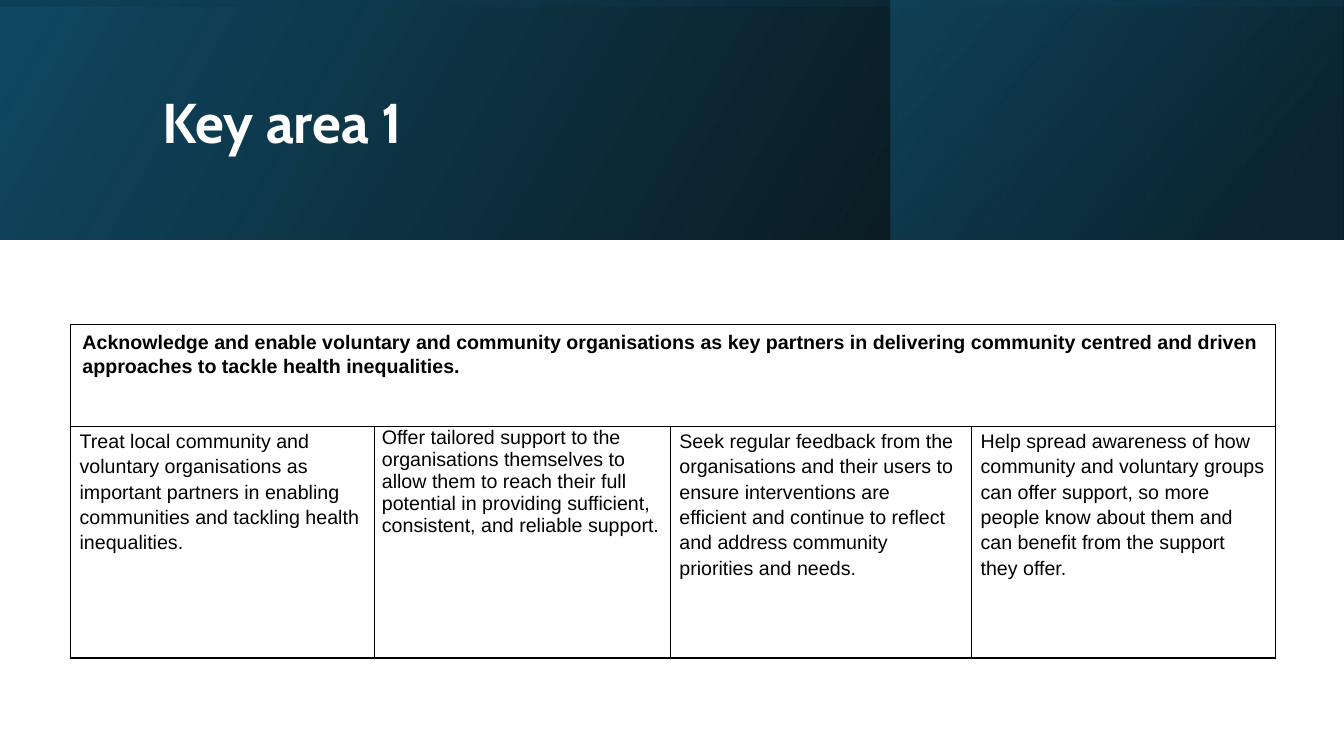
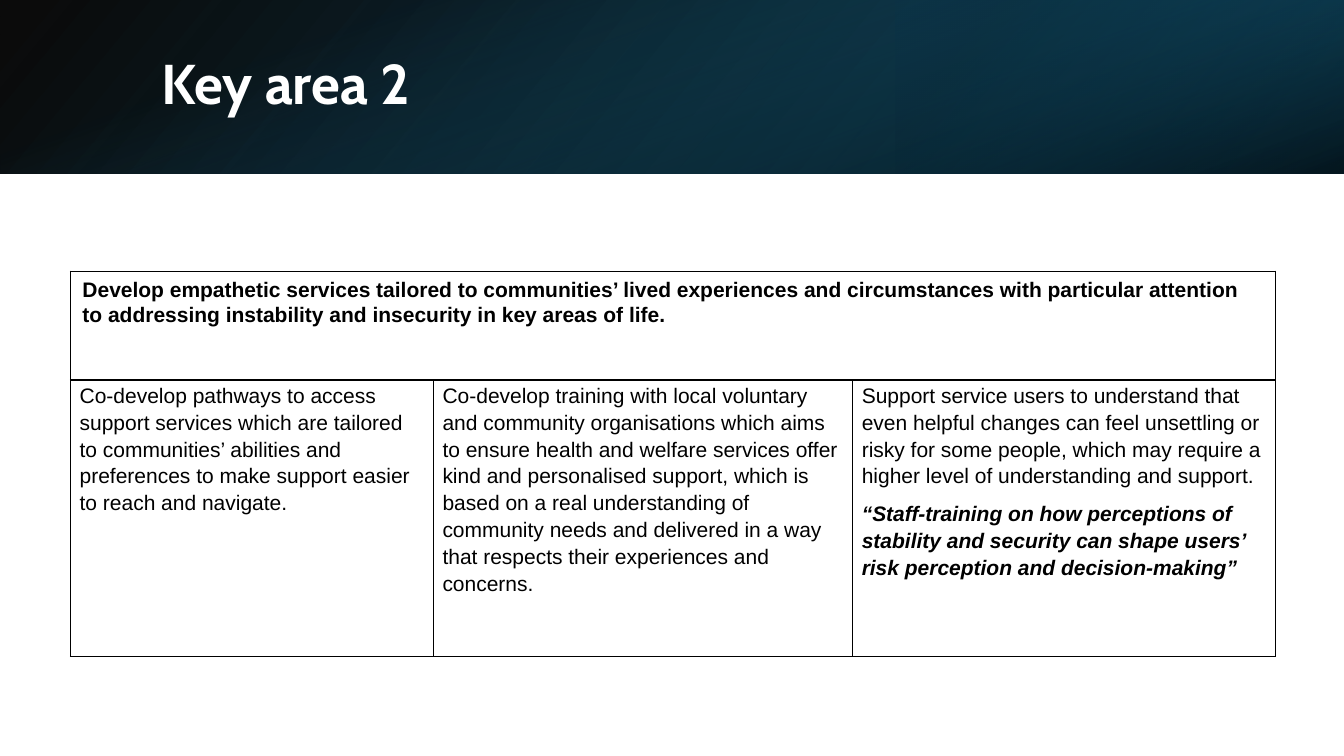
from dataclasses import dataclass

from lxml import etree
from pptx import Presentation
from pptx.dml.color import RGBColor
from pptx.enum import shapes, text
from pptx.oxml import ns
from pptx.util import Pt

COLORS = {
    "black": "000000",
    "white": "FFFFFF",
    "navy": "0B3041",
    "ocean": "104862",
    "teal": "156082",
}
TITLE_FONT, BODY_FONT = "Cabin", "Arial"
SLIDE_W, SLIDE_H = 960, 540
TABLE_LEFT = 50.4


@dataclass
class Band:
    stops: list
    angle: int
    left: float = 0
    rotation: int = 0
    flip: bool = True


@dataclass
class Action:
    paragraphs: list
    margins: tuple = (6.5, 0.7, 6.5, 0)
    spacing: float = 1.15
    after: float = 8


def add_node(parent, tag, **attributes):
    return etree.SubElement(parent, ns.qn(tag), attributes)


def style_runs(paragraph, font, size, color, bold=False, italic=False):
    for run in paragraph.runs:
        run.font.name = font
        run.font.size = Pt(size)
        run.font.bold = bold
        run.font.italic = italic
        run.font.color.rgb = RGBColor.from_string(COLORS[color])


def fill_gradient(shape, stops, angle):
    properties = shape._element.spPr
    gradient = etree.Element(ns.qn("a:gradFill"), rotWithShape="1")
    stop_list = add_node(gradient, "a:gsLst")
    for position, color, opacity in stops:
        stop = add_node(stop_list, "a:gs", pos=str(position * 1000))
        tint = add_node(stop, "a:srgbClr", val=COLORS[color])
        add_node(tint, "a:alpha", val=str(opacity * 1000))
    add_node(gradient, "a:lin", ang=str(angle * 60000), scaled="0")
    properties.find(ns.qn("a:prstGeom")).addnext(gradient)


def add_banner(slide, height, bands):
    for band in bands:
        left, top, width, depth = band.left, 0, SLIDE_W - band.left, height
        if band.rotation % 180:
            left, top = left + (width - depth) / 2, (depth - width) / 2
            width, depth = depth, width
        panel = slide.shapes.add_shape(
            shapes.MSO_SHAPE.RECTANGLE, Pt(left), Pt(top), Pt(width), Pt(depth))
        panel.shadow.inherit = False
        panel.line.fill.background()
        panel.rotation = band.rotation
        if band.flip:
            panel._element.spPr.xfrm.set("flipH", "1")
        fill_gradient(panel, band.stops, band.angle)


def place_title(slide, wording, box):
    title = slide.shapes.title
    title.left, title.top, title.width, title.height = map(Pt, box)
    slide.shapes._spTree.append(title._element)
    frame = title.text_frame
    frame.text = wording
    frame.word_wrap = True
    frame.auto_size = text.MSO_AUTO_SIZE.NONE
    frame.vertical_anchor = text.MSO_ANCHOR.MIDDLE
    heading = frame.paragraphs[0]
    heading.alignment = text.PP_ALIGN.LEFT
    heading.line_spacing = 0.9
    style_runs(heading, TITLE_FONT, 40, "white", bold=True)


def frame_cell(cell):
    properties = cell._tc.get_or_add_tcPr()
    for side in ("a:lnL", "a:lnR", "a:lnT", "a:lnB"):
        border = add_node(properties, side, w=str(Pt(1)))
        add_node(add_node(border, "a:solidFill"), "a:srgbClr", val=COLORS["black"])
    cell.fill.background()


def write_cell(cell, action, size, bold=False):
    (cell.margin_left, cell.margin_top,
     cell.margin_right, cell.margin_bottom) = map(Pt, action.margins)
    cell.vertical_anchor = text.MSO_ANCHOR.TOP
    frame = cell.text_frame
    frame.text = "\n".join(action.paragraphs)
    for index, paragraph in enumerate(frame.paragraphs):
        is_quote = index > 0
        paragraph.line_spacing = action.spacing
        paragraph.space_after = Pt(action.after)
        style_runs(paragraph, BODY_FONT, size, "black", bold or is_quote, is_quote)


def add_action_table(slide, top, widths, heights, size, aim, actions):
    table = slide.shapes.add_table(
        len(heights), len(widths), Pt(TABLE_LEFT), Pt(top),
        Pt(sum(widths)), Pt(sum(heights))).table
    table.first_row = table.horz_banding = False
    for column, width in zip(table.columns, widths):
        column.width = Pt(width)
    for row, height in zip(table.rows, heights):
        row.height = Pt(height)
    for cell in table.iter_cells():
        frame_cell(cell)
    table.cell(0, 0).merge(table.cell(0, len(widths) - 1))
    aim_text = Action([aim], margins=(8.5, 4.3, 8.5, 4.3), spacing=1.07)
    write_cell(table.cell(0, 0), aim_text, size, bold=True)
    for index, action in enumerate(actions):
        write_cell(table.cell(1, index), action, size)


def add_key_area(deck, wording, title_box, banner_height, bands, **content):
    slide = deck.slides.add_slide(deck.slide_layouts[5])
    add_banner(slide, banner_height, bands)
    place_title(slide, wording, title_box)
    add_action_table(slide, **content)


def main():
    deck = Presentation()
    deck.slide_width, deck.slide_height = Pt(SLIDE_W), Pt(SLIDE_H)
    base = [(0, "black", 96), (100, "ocean", 100)]

    add_key_area(
        deck, "Key area 1", (108.7, 27.4, 765.4, 123.8), 170.9,
        [
            Band(base, 330),
            Band([(19, "navy", 68), (100, "teal", 48)], 320, left=636),
            Band([(23, "ocean", 16), (99, "black", 45)], 350, rotation=270),
        ],
        top=231.8, widths=(217.4, 211, 215.2, 217.4), heights=(72.9, 165.4), size=14,
        aim="Acknowledge and enable voluntary and community organisations as key "
            "partners in delivering community centred and driven approaches to tackle "
            "health inequalities.",
        actions=[
            Action(["Treat local community and voluntary organisations as important "
                    "partners in enabling communities and tackling health "
                    "inequalities."]),
            Action(["Offer tailored support to the organisations themselves to allow "
                    "them to reach their full potential in providing sufficient, "
                    "consistent, and reliable support."],
                   margins=(5, 0, 5, 0), spacing=1.0, after=0),
            Action(["Seek regular feedback from the organisations and their users to "
                    "ensure interventions are efficient and continue to reflect and "
                    "address community priorities and needs."]),
            Action(["Help spread awareness of how community and voluntary groups can "
                    "offer support, so more people know about them and can benefit "
                    "from the support they offer."]),
        ])

    add_key_area(
        deck, "Key area 2", (108, 27.4, 790.6, 69.1), 124,
        [
            Band(base, 140),
            Band([(19, "navy", 68), (100, "teal", 79)], 320, left=640, rotation=180),
            Band([(23, "teal", 0), (99, "black", 74)], 340, rotation=90, flip=False),
        ],
        top=193.7, widths=(259.2, 299.5, 302.3), heights=(77.8, 197.3), size=15,
        aim="Develop empathetic services tailored to communities’ lived experiences "
            "and circumstances with particular attention to addressing instability "
            "and insecurity in key areas of life.",
        actions=[
            Action(["Co-develop pathways to access support services which are tailored "
                    "to communities’ abilities and preferences to make support easier "
                    "to reach and navigate."]),
            Action(["Co-develop training with local voluntary and community "
                    "organisations which aims to ensure health and welfare services "
                    "offer kind and personalised support, which is based on a real "
                    "understanding of community needs and delivered in a way that "
                    "respects their experiences and concerns."]),
            Action(["Support service users to understand that even helpful changes can "
                    "feel unsettling or risky for some people, which may require a "
                    "higher level of understanding and support.",
                    "“Staff-training on how perceptions of stability and security can "
                    "shape users’ risk perception and decision-making”"]),
        ])

    deck.save("out.pptx")


if __name__ == "__main__":
    main()
